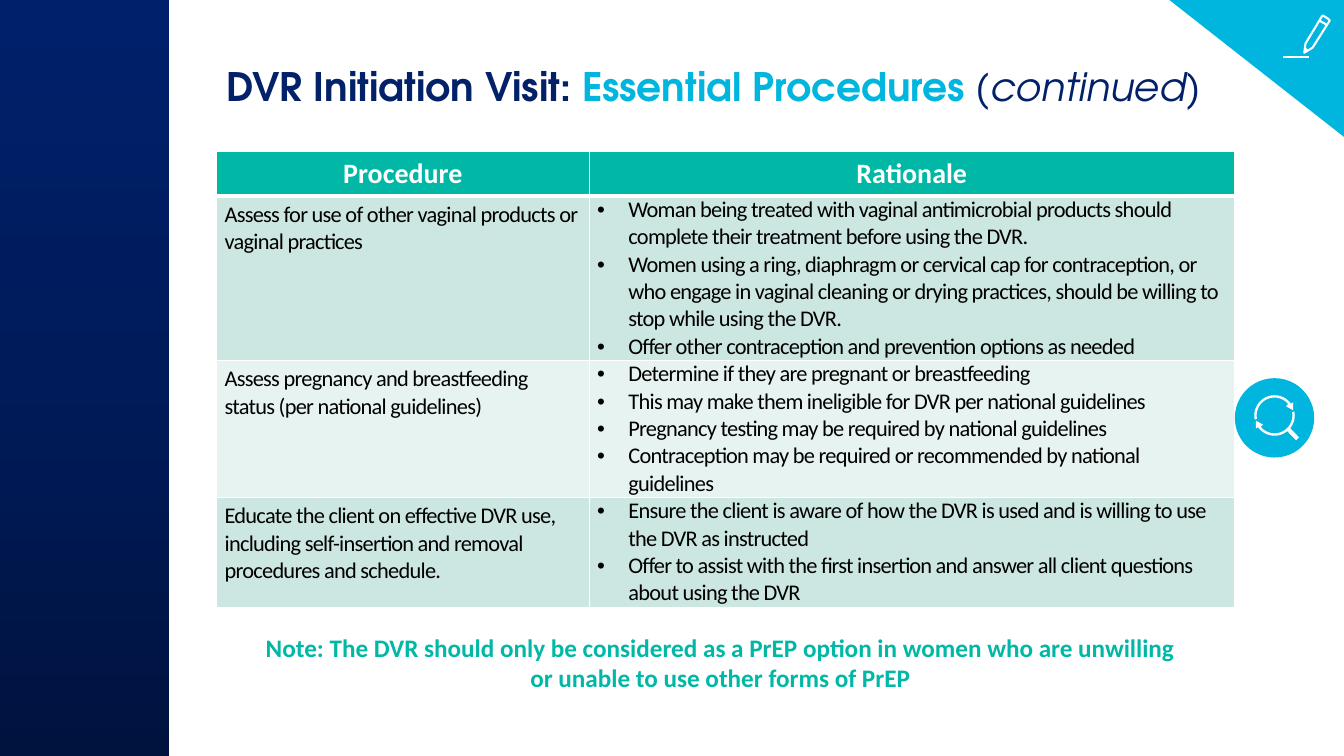
import copy
import math

from lxml import etree
from pptx import Presentation
from pptx import util as u
from pptx.dml.color import RGBColor
from pptx.enum import shapes, text
from pptx.oxml.ns import qn

NAVY, CYAN, TEAL, WHITE, BLACK = "022169", "00B5DE", "00B8A5", "FFFFFF", "000000"
BANDS = ["CCE6E1", "E7F3F0"]
HEADERS = ["Procedure", "Rationale"]
COL_SHARES = [0.366, 0.634]
ROW_HEIGHTS = [1.11, 4.14, 3.45, 2.77]
ROWS = [
    ("Assess for use of other vaginal products or vaginal practices",
     ["Woman being treated with vaginal antimicrobial products should complete "
      "their treatment before using the DVR.",
      "Women using a ring, diaphragm or cervical cap for contraception, or who engage "
      "in vaginal cleaning or drying practices, should be willing to stop while using the DVR.",
      "Offer other contraception and prevention options as needed"]),
    ("Assess pregnancy and breastfeeding status (per national guidelines)",
     ["Determine if they are pregnant or breastfeeding",
      "This may make them ineligible for DVR per national guidelines",
      "Pregnancy testing may be required by national guidelines",
      "Contraception may be required or recommended by national guidelines"]),
    ("Educate the client on effective DVR use, including self-insertion and removal "
     "procedures and schedule.",
     ["Ensure the client is aware of how the DVR is used and is willing to use the DVR "
      "as instructed",
      "Offer to assist with the first insertion and answer all client questions about "
      "using the DVR"]),
]


def rgb(color):
    return RGBColor.from_string(color)


def cm(*values):
    return [u.Cm(v) for v in values]


def add_text(p, words, size, color, font="Calibri", bold=False, italic=False,
             align=None, spacing=None):
    r = p.add_run()
    r.text = words
    r.font.size, r.font.name = u.Pt(size), font
    r.font.bold, r.font.italic = bold, italic
    r.font.color.rgb = rgb(color)
    if align is not None:
        p.alignment = align
    if spacing is not None:
        r._r.get_or_add_rPr().set("spc", str(int(spacing * 100)))


def add_bullet(p, indent):
    pPr = p._p.get_or_add_pPr()
    pPr.set("marL", str(u.Cm(indent)))
    pPr.set("indent", str(-u.Cm(indent)))
    etree.SubElement(pPr, qn("a:buFont")).set("typeface", "Arial")
    etree.SubElement(pPr, qn("a:buChar")).set("char", "•")


def set_borders(cell, bottom=1):
    tcPr = cell._tc.get_or_add_tcPr()
    for side, width in (("L", 1), ("R", 1), ("T", 1), ("B", bottom)):
        ln = etree.SubElement(tcPr, qn(f"a:ln{side}"), w=str(u.Pt(width)))
        fill = etree.SubElement(ln, qn("a:solidFill"))
        etree.SubElement(fill, qn("a:srgbClr"), val=WHITE)


def fill_solid(sp, color):
    sp.shadow.inherit = False
    sp.fill.solid()
    sp.fill.fore_color.rgb = rgb(color)
    sp.line.fill.background()


def add_outline(group, points, x, y):
    """Closed freeform through points given in cm from x, y."""
    start, *rest = [cm(*pt) for pt in points]
    builder = group.shapes.build_freeform(*start, scale=1.0)
    builder.add_line_segments(rest, close=True)
    sp = builder.convert_to_shape(*cm(x, y))
    sp.shadow.inherit = False
    return sp


def add_line(group, x1, y1, x2, y2, width):
    line = group.shapes.add_connector(shapes.MSO_CONNECTOR.STRAIGHT, *cm(x1, y1, x2, y2))
    line.line.color.rgb = rgb(WHITE)
    line.line.width = u.Pt(width)
    etree.SubElement(line._element.spPr, qn("a:effectLst"))


def add_sidebar(s, x, y, w, h):
    sp = s.shapes.add_shape(shapes.MSO_SHAPE.RECTANGLE, *cm(x, y, w, h))
    sp.shadow.inherit = False
    sp.line.fill.background()
    sp.fill.gradient()
    sp.fill.gradient_angle = 90
    first = sp._element.spPr.find(f".//{qn('a:gs')}")
    first.addnext(copy.deepcopy(first))
    stops = ((0, "00133F"), (0.5, "001B5A"), (1, "00206B"))
    for stop, (position, color) in zip(sp.fill.gradient_stops, stops):
        stop.position = position
        stop.color.rgb = rgb(color)


def add_title(s, x, y, w, h):
    sp = s.shapes.title
    sp.left, sp.top, sp.width, sp.height = cm(x, y, w, h)
    tf = sp.text_frame
    tf.auto_size = text.MSO_AUTO_SIZE.NONE
    tf.vertical_anchor = text.MSO_ANCHOR.TOP
    p = tf.paragraphs[0]
    p.alignment = text.PP_ALIGN.LEFT
    face = {"size": 28, "font": "TeX Gyre Adventor"}
    add_text(p, "DVR Initiation Visit: ", color=NAVY, bold=True, **face)
    add_text(p, "Essential Procedures ", color=CYAN, bold=True, **face)
    add_text(p, "(continued)", color=NAVY, italic=True, **face)


def add_procedures(s, x, y, w):
    frame = s.shapes.add_table(len(ROWS) + 1, len(HEADERS),
                               *cm(x, y, w, sum(ROW_HEIGHTS)))
    table = frame.table
    for col, share in zip(table.columns, COL_SHARES):
        col.width = u.Cm(w * share)
    for row, height in zip(table.rows, ROW_HEIGHTS):
        row.height = u.Cm(height)

    for i, heading in enumerate(HEADERS):
        cell = table.cell(0, i)
        format_cell(cell, TEAL, bottom=3)
        cell.vertical_anchor = text.MSO_ANCHOR.MIDDLE
        add_text(cell.text_frame.paragraphs[0], heading, 20, WHITE, bold=True,
                 align=text.PP_ALIGN.CENTER)
    for n, (procedure, reasons) in enumerate(ROWS):
        left, right = table.cell(n + 1, 0), table.cell(n + 1, 1)
        for cell, margin in ((left, 0.13), (right, 0)):
            format_cell(cell, BANDS[n % 2])
            cell.margin_left = cell.margin_right = u.Cm(0.2)
            cell.margin_top = cell.margin_bottom = u.Cm(margin)
        add_text(left.text_frame.paragraphs[0], procedure, 16, BLACK, spacing=-0.5)
        tf = right.text_frame
        for i, reason in enumerate(reasons):
            p = tf.add_paragraph() if i else tf.paragraphs[0]
            add_bullet(p, 0.79)
            add_text(p, reason, 16, BLACK, spacing=-0.5)


def format_cell(cell, color, bottom=1):
    set_borders(cell, bottom)
    cell.fill.solid()
    cell.fill.fore_color.rgb = rgb(color)


def add_note(s, x, y, w, h):
    tf = s.shapes.add_textbox(*cm(x, y, w, h)).text_frame
    tf.word_wrap = True
    add_text(tf.paragraphs[0],
             "Note: The DVR should only be considered as a PrEP option in women who are "
             "unwilling or unable to use other forms of PrEP",
             18, TEAL, bold=True, align=text.PP_ALIGN.CENTER)


def add_pen_corner(s, x, y, w, h):
    sp = s.shapes.add_shape(shapes.MSO_SHAPE.RIGHT_TRIANGLE, *cm(x, y, w, h))
    sp.rotation = 180
    fill_solid(sp, CYAN)
    pen = s.shapes.add_group_shape()
    px, py = x + 2.87, y + 0.39
    body = add_outline(pen, [(0.74, 0.81), (0.53, 0.94), (0.56, 0.71), (0.97, 0.03),
                             (1, 0), (1.14, 0.09), (1.17, 0.13)], px, py)
    body.fill.background()
    body.line.color.rgb = rgb(WHITE)
    body.line.width = u.Pt(1.5)
    for x1, y1, x2, y2 in ((0.91, 0.13, 1.09, 0.23), (0.56, 0.84, 0.61, 0.89),
                           (0, 1.04, 0.64, 1.04)):
        add_line(pen, px + x1, py + y1, px + x2, py + y2, 1.5)


def add_review_badge(s, x, y, size):
    """Disc with two arc arrows that form a magnifier."""
    badge = s.shapes.add_group_shape()
    fill_solid(badge.shapes.add_shape(shapes.MSO_SHAPE.OVAL, *cm(x, y, size, size)), CYAN)
    cx, cy = x + size / 2, y + size / 2 - 0.06

    def arc(radius, angles):
        return [(radius * math.cos(math.radians(a)), radius * math.sin(math.radians(a)))
                for a in angles]

    arrow = (arc(0.51, range(168, 325, 6)) + [(0.47, -0.33), (0.47, -0.13), (0.29, -0.23)]
             + arc(0.45, range(320, 167, -6)))
    for turn in (1, -1):
        fill_solid(add_outline(badge, [(turn * a, turn * b) for a, b in arrow], cx, cy), WHITE)
    add_line(badge, cx + 0.33, cy + 0.33, cx + 0.58, cy + 0.59, 3)


def main():
    prs = Presentation()
    prs.slide_width, prs.slide_height = cm(33.87, 19.05)
    s = prs.slides.add_slide(prs.slide_layouts[5])
    add_sidebar(s, 0, 0, 4.27, 19.05)
    add_title(s, 5.46, 1.45, 25.4, 2.34)
    add_procedures(s, 5.46, 3.82, 25.65)
    add_note(s, 6.27, 15.8, 23.77, 1.8)
    add_pen_corner(s, 29.47, 0, 4.4, 3.45)
    add_review_badge(s, 31.12, 9.53, 2)
    prs.save("out.pptx")


if __name__ == "__main__":
    main()
